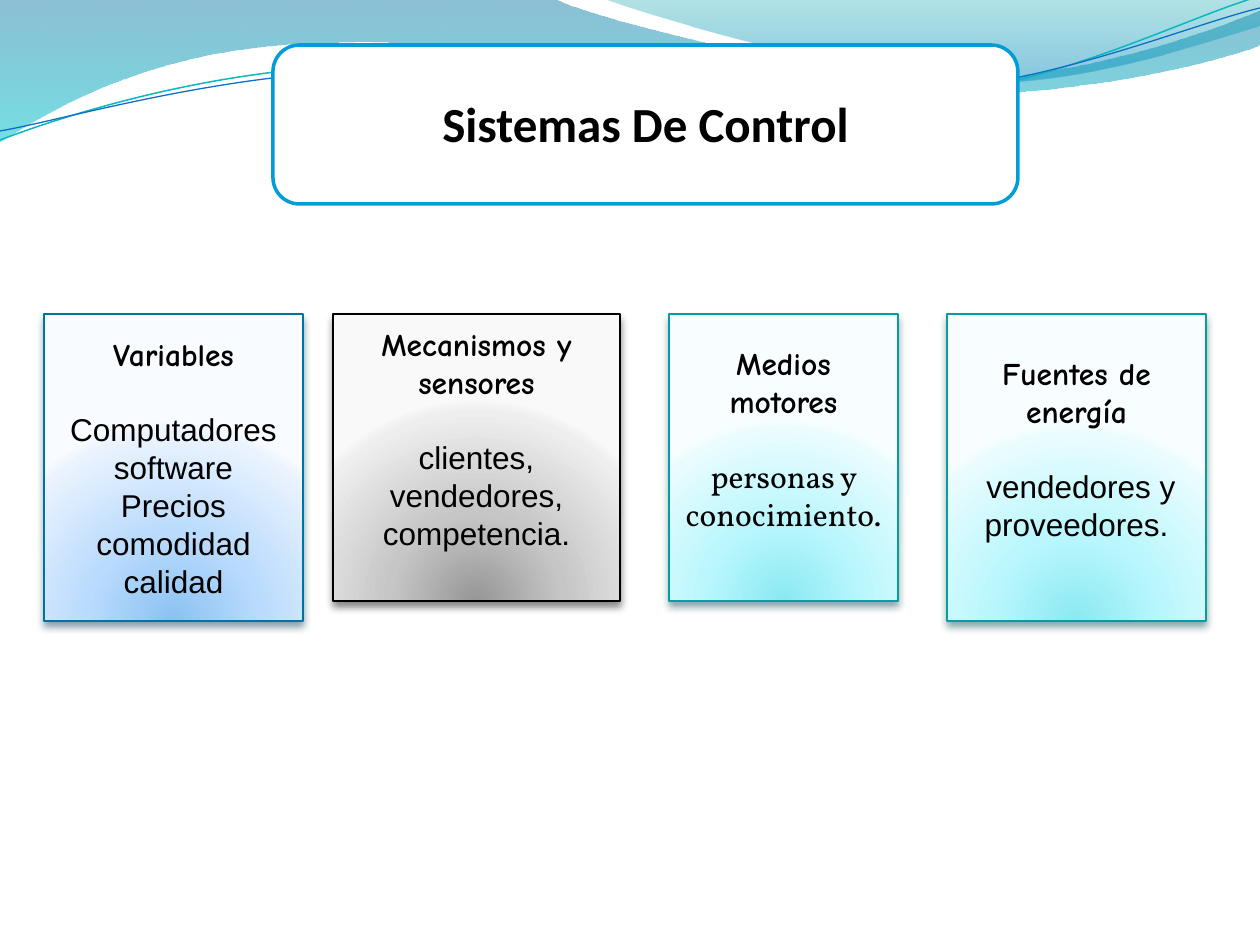
from pptx import Presentation
from pptx.dml.color import RGBColor
from pptx.enum.shapes import MSO_SHAPE
from pptx.enum.text import MSO_ANCHOR, PP_ALIGN
from pptx.oxml import parse_xml
from pptx.oxml.ns import nsdecls, qn
from pptx.util import Pt

RECTANGLE, ROUNDED = MSO_SHAPE.RECTANGLE, MSO_SHAPE.ROUNDED_RECTANGLE
TOP, MIDDLE = MSO_ANCHOR.TOP, MSO_ANCHOR.MIDDLE
CENTER = PP_ALIGN.CENTER
SCALE = 914400 / 126
CARD_TOP = 314
LINEAR = '<a:lin ang="5400000" scaled="1"/>'
RADIAL = '<a:path path="circle"><a:fillToRect l="50000" t="130000" r="50000" b="-30000"/></a:path>'

WAVES = [
    {"path": [(0, 0), (554, -1), (600, 21, 837, 79, 955, 79), (1075, 79, 1207, 33, 1260, 11),
              (1261, 45), (1239, 55, 1096, 96, 940, 94), (784, 94, 481, 35, 324, 43),
              (163, 45, 58, 105, -1, 142), (0, 0)],
     "stops": [(0, "0074A1", 45), (100, "00C6CF", 55)]},
    {"path": [(604, -1), (641, 14, 859, 78, 969, 82), (1079, 87, 1211, 40, 1260, 26), (1260, 0),
              (604, -1)],
     "stops": [(0, "00A1A9", 30), (80, "008BBF", 45)]},
    {"path": [(0, 140), (60, 117, 199, 72, 349, 66), (498, 59, 747, 112, 898, 101),
              (1050, 89, 1182, 19, 1257, -3)],
     "line": ("0AB8BF", 0.85)},
    {"path": [(0, 131), (59, 121, 207, 77, 357, 71), (508, 64, 752, 106, 903, 94),
              (1053, 84, 1186, 26, 1260, 8)],
     "line": ("0F6FC6", 0.75)},
]

TITLE = "Sistemas De Control"
TITLE_BOX = (273, 45, 745, 159)
TITLE_FONT = {"name": "Calibri", "size": Pt(28), "bold": True}
HEADING_FONT = {"name": "Comic Neue", "size": Pt(18), "bold": True}

BLUE = {"stops": ["8BC2F1", "B9DBFD", "EAF3FE", "F8FBFF"], "line": "0074A1", "shadow": "00374C"}
GRAY = {"stops": ["979797", "C6C6C6", "EEEEEE", "F9F9F9"], "line": "000000", "shadow": "000000"}
CYAN = {"stops": ["8BE9F1", "B9F7FD", "EAFCFE", "F8FEFF"], "line": "069CA3", "shadow": "024B4E"}
STOP_POSITIONS = [0, 43, 93, 100]

CARDS = [
    {"heading": "Variables", "body": ["Computadores software", "Precios", "comodidad calidad"],
     "left": 44, "size": (259, 307), "inset": 21, "font": "Arial", "theme": BLUE},
    {"heading": "Mecanismos y sensores", "body": ["clientes, vendedores, competencia."],
     "left": 333, "size": (287, 287), "inset": 11, "font": "Arial", "theme": GRAY},
    {"heading": "Medios motores", "body": ["personas y conocimiento."],
     "left": 669, "size": (229, 287), "inset": 30, "font": "Vollkorn", "theme": CYAN},
    {"heading": "Fuentes de energía", "body": [" vendedores y proveedores."],
     "left": 947, "size": (259, 307), "inset": 40, "font": "Arial", "theme": CYAN},
]


def px(value):
    return round(value * SCALE)


def color(value):
    return RGBColor.from_string(value)


def set_line(shape, value, width):
    shape.line.color.rgb = color(value)
    shape.line.width = Pt(width)


def set_gradient(shape, stops, direction):
    stop_xml = "".join(
        f'<a:gs pos="{position * 1000}"><a:srgbClr val="{value}">'
        f'<a:alpha val="{alpha * 1000}"/></a:srgbClr></a:gs>'
        for position, value, alpha in stops)
    gradient = parse_xml(f'<a:gradFill {nsdecls("a")} rotWithShape="1">'
                         f'<a:gsLst>{stop_xml}</a:gsLst>{direction}</a:gradFill>')
    shape.fill.background()
    properties = shape._element.spPr
    properties.replace(properties.find(qn("a:noFill")), gradient)


def set_shadow(shape, value):
    effects = shape._element.spPr.find(qn("a:effectLst"))
    effects.append(parse_xml(
        f'<a:outerShdw {nsdecls("a")} blurRad="{Pt(4.5)}" dist="{Pt(3)}" dir="5400000" rotWithShape="0">'
        f'<a:srgbClr val="{value}"><a:alpha val="48000"/></a:srgbClr></a:outerShdw>'))


def bend_segments(shape, segments):
    lines = iter(list(shape._element.iter(qn("a:lnTo"))))
    for segment in segments:
        first = next(lines)
        if len(segment) == 2:
            continue
        curve = parse_xml(f'<a:cubicBezTo {nsdecls("a")}/>')
        first.addprevious(curve)
        for line in (first, next(lines), next(lines)):
            curve.append(line[0])
            line.getparent().remove(line)


def add_wave(slide, wave):
    start, *segments = wave["path"]
    points = [(px(segment[index]), px(segment[index + 1]))
              for segment in segments for index in range(0, len(segment), 2)]
    builder = slide.shapes.build_freeform(*map(px, start))
    builder.add_line_segments(points, close="stops" in wave)
    shape = builder.convert_to_shape()
    bend_segments(shape, segments)
    shape.shadow.inherit = False
    if "stops" in wave:
        set_gradient(shape, wave["stops"], LINEAR)
        shape.line.fill.background()
    else:
        shape.fill.background()
        set_line(shape, *wave["line"])


def add_box(slide, kind, box, anchor, paragraphs):
    shape = slide.shapes.add_shape(kind, *map(px, box))
    shape.shadow.inherit = False
    frame = shape.text_frame
    frame.word_wrap = True
    frame.vertical_anchor = anchor
    for index, (text, font, space_before) in enumerate(paragraphs):
        paragraph = frame.add_paragraph() if index else frame.paragraphs[0]
        paragraph.alignment = CENTER
        paragraph.space_before = Pt(space_before)
        run = paragraph.add_run()
        run.text = text
        run.font.color.rgb = color("000000")
        for name, value in font.items():
            setattr(run.font, name, value)
    return shape


def add_card(slide, card):
    theme = card["theme"]
    body_font = {"name": card["font"], "size": Pt(18), "bold": False}
    paragraphs = [(card["heading"], HEADING_FONT, 0)]
    paragraphs += [(text, body_font, 0 if index else 21.5) for index, text in enumerate(card["body"])]
    shape = add_box(slide, RECTANGLE, (card["left"], CARD_TOP, *card["size"]), TOP, paragraphs)
    shape.text_frame.margin_top = px(card["inset"])
    set_gradient(shape, [(position, value, 100) for position, value in zip(STOP_POSITIONS, theme["stops"])],
                 RADIAL)
    set_line(shape, theme["line"], 0.75)
    set_shadow(shape, theme["shadow"])


def main():
    presentation = Presentation()
    presentation.slide_width, presentation.slide_height = px(1260), px(945)
    slide = presentation.slides.add_slide(presentation.slide_layouts[6])
    for wave in WAVES:
        add_wave(slide, wave)
    title = add_box(slide, ROUNDED, TITLE_BOX, MIDDLE, [(TITLE, TITLE_FONT, 0)])
    title.text_frame.margin_bottom = px(10)
    title.fill.solid()
    title.fill.fore_color.rgb = color("FFFFFF")
    set_line(title, "009DD9", 2)
    for card in CARDS:
        add_card(slide, card)
    presentation.save("out.pptx")


if __name__ == "__main__":
    main()
